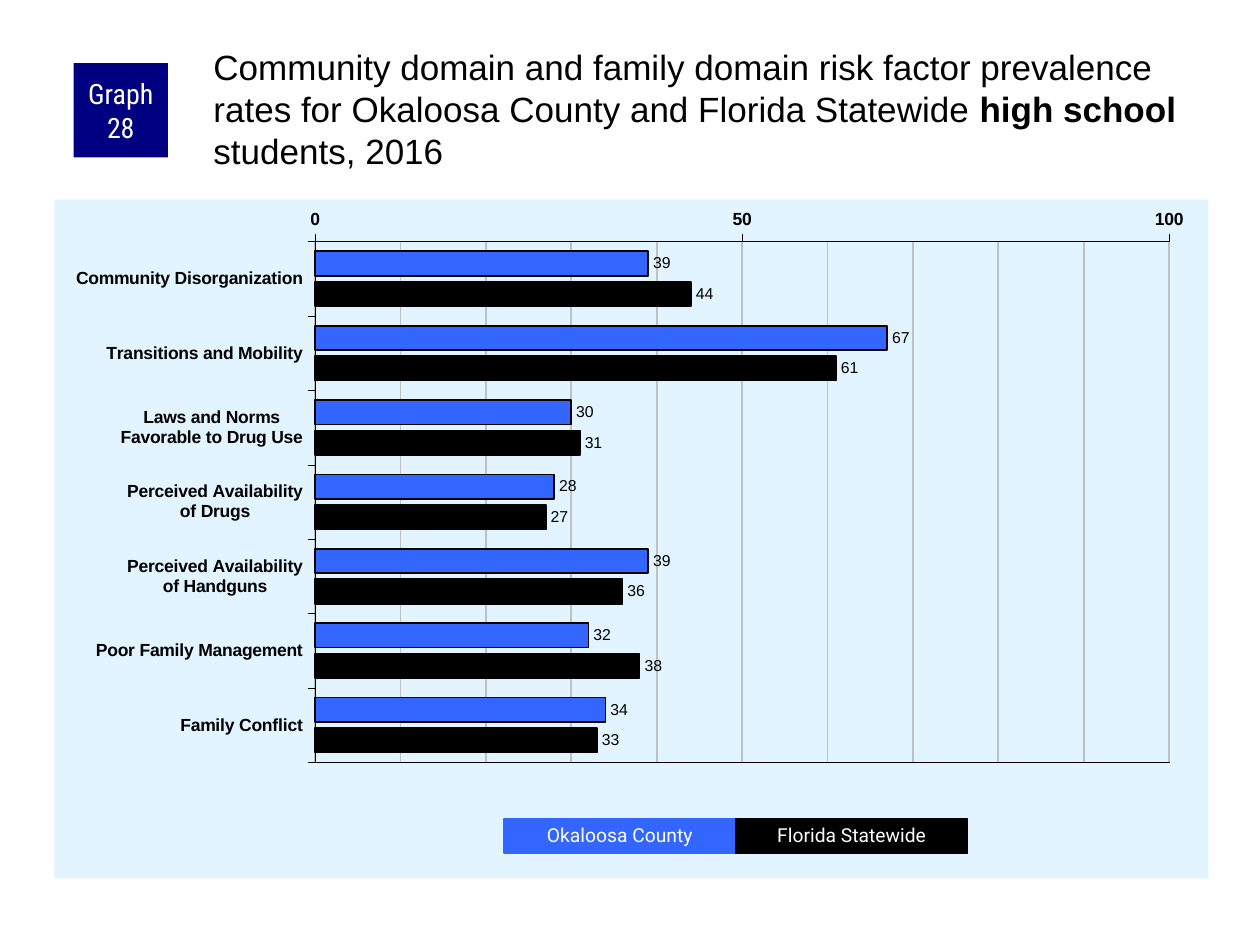
"""Build the slide with a bar chart of risk factor prevalence rates."""
import pptx
import pptx.chart.data
import pptx.dml.color
import pptx.enum.chart
import pptx.enum.shapes
import pptx.enum.text
import pptx.oxml
import pptx.oxml.ns
import pptx.util

Pt = pptx.util.Pt
ec = pptx.enum.chart
et = pptx.enum.text


def rgb(value):
    return pptx.dml.color.RGBColor.from_string(value)


def style(font, name, size, color, bold=False):
    for key, value in {"name": name, "size": Pt(size), "bold": bold}.items():
        setattr(font, key, value)
    font.color.rgb = rgb(color)


prs = pptx.Presentation()
prs.slide_width, prs.slide_height = Pt(720), Pt(540)
s = prs.slides.add_slide(prs.slide_layouts[6])

data = pptx.chart.data.CategoryChartData()
data.categories = [
    "Community Disorganization",
    "Transitions and Mobility",
    "Laws and Norms\nFavorable to Drug Use",
    "Perceived Availability\nof Drugs",
    "Perceived Availability\nof Handguns",
    "Poor Family Management",
    "Family Conflict",
]
data.add_series("Okaloosa County", [39, 67, 30, 28, 39, 32, 34])
data.add_series("Florida Statewide", [44, 61, 31, 27, 36, 38, 33])
chart = s.shapes.add_chart(ec.XL_CHART_TYPE.BAR_CLUSTERED, Pt(31), Pt(114),
                           Pt(659.5), Pt(388), data).chart
for key in ("has_legend", "has_title"):
    setattr(chart, key, False)
style(chart.font, "Arial", 11.8, "000000")

plot = chart.plots[0]
for key, value in {"gap_width": 80, "overlap": -25, "vary_by_categories": False}.items():
    setattr(plot, key, value)
series_colors = ["3366FF", "000000"]
for series, color in zip(plot.series, series_colors):
    series.format.fill.solid()
    series.format.fill.fore_color.rgb = rgb(color)
    series.format.line.color.rgb = rgb("000000")
    series.format.line.width = Pt(1)
    labels = series.data_labels
    labels.show_value = True
    labels.position = ec.XL_LABEL_POSITION.OUTSIDE_END
    style(labels.font, "Arial", 9, "000000")

cat, val = chart.category_axis, chart.value_axis
axis_formats = [
    (cat, {"reverse_order": True, "crosses": ec.XL_AXIS_CROSSES.MAXIMUM}),
    (val, {"minimum_scale": 0, "maximum_scale": 100, "major_unit": 50, "minor_unit": 10,
           "has_major_gridlines": True, "has_minor_gridlines": True}),
]
for axis, formats in axis_formats:
    for key, value in formats.items():
        setattr(axis, key, value)
    axis.major_tick_mark = ec.XL_TICK_MARK.OUTSIDE
    axis.minor_tick_mark = ec.XL_TICK_MARK.NONE
    style(axis.tick_labels.font, "Arial", 10, "000000", True)
    axis.format.line.color.rgb = rgb("000000")
    axis.format.line.width = Pt(0.25)
val.tick_labels.number_format = "0"
val.tick_labels.number_format_is_linked = False
val.major_gridlines.format.line.color.rgb = rgb("C0C0C0")
val.major_gridlines.format.line.width = Pt(1)

ns = pptx.oxml.ns.nsdecls("c", "a")
minor = val._element.find(pptx.oxml.ns.qn("c:minorGridlines"))
minor.append(pptx.oxml.parse_xml(
    f'<c:spPr {ns}><a:ln w="12700"><a:solidFill><a:srgbClr val="C0C0C0"/></a:solidFill></a:ln></c:spPr>'))
area = chart._chartSpace.chart.plotArea
for old in area.findall(pptx.oxml.ns.qn("c:layout")):
    area.remove(old)
box = "".join(f'<c:{key} val="{value}"/>' for key, value in [
    ("layoutTarget", "inner"), ("xMode", "edge"), ("yMode", "edge"),
    ("x", 0.226), ("y", 0.062), ("w", 0.74), ("h", 0.767)])
area.insert(0, pptx.oxml.parse_xml(
    f"<c:layout {ns}><c:manualLayout>{box}</c:manualLayout></c:layout>"))
area.append(pptx.oxml.parse_xml(
    f'<c:spPr {ns}><a:noFill/><a:ln w="3175"><a:solidFill><a:srgbClr val="000000"/></a:solidFill></a:ln></c:spPr>'))
chart._chartSpace.chart.addnext(pptx.oxml.parse_xml(
    f'<c:spPr {ns}><a:solidFill><a:srgbClr val="E1F4FF"/></a:solidFill><a:ln><a:noFill/></a:ln></c:spPr>'))

boxes = [
    ("Graph 28", 42, 36, 54, 54, "000080", None, "Roboto Condensed", 16, 1, 3.6),
    ("Okaloosa County", 288, 468, 132.5, 19.5, series_colors[0], 0.75, "Roboto", 11, 0.9, 7.2),
    ("Florida Statewide", 420.5, 468, 132.5, 19.5, series_colors[1], 0.75, "Roboto", 11, 0.9, 7.2),
]
for text, x, y, w, h, color, line, font, size, spacing, inset in boxes:
    sp = s.shapes.add_shape(pptx.enum.shapes.MSO_SHAPE.RECTANGLE, Pt(x), Pt(y), Pt(w), Pt(h))
    sp.shadow.inherit = False
    sp.fill.solid()
    sp.fill.fore_color.rgb = rgb(color)
    if line:
        sp.line.color.rgb = rgb(color)
        sp.line.width = Pt(line)
    else:
        sp.line.fill.background()
    tf = sp.text_frame
    for key, value in {"word_wrap": True, "vertical_anchor": et.MSO_ANCHOR.MIDDLE,
                       "margin_left": Pt(inset), "margin_right": Pt(inset),
                       "margin_top": 0, "margin_bottom": 0}.items():
        setattr(tf, key, value)
    p = tf.paragraphs[0]
    p.alignment = et.PP_ALIGN.CENTER
    p.line_spacing = spacing
    r = p.add_run()
    r.text = text
    style(r.font, font, size, "FFFFFF")

tf = s.shapes.add_textbox(Pt(120), Pt(24), Pt(570), Pt(60)).text_frame
for key, value in {"word_wrap": True, "margin_left": Pt(2), "margin_top": Pt(2),
                   "margin_right": 0, "margin_bottom": 0}.items():
    setattr(tf, key, value)
p = tf.paragraphs[0]
for text, bold in [
    ("Community domain and family domain risk factor prevalence rates for "
     "Okaloosa County and Florida Statewide ", False),
    ("high school", True),
    (" students, 2016", False),
]:
    r = p.add_run()
    r.text = text
    style(r.font, "Arial", 20, "000000", bold)

prs.save("out.pptx")
